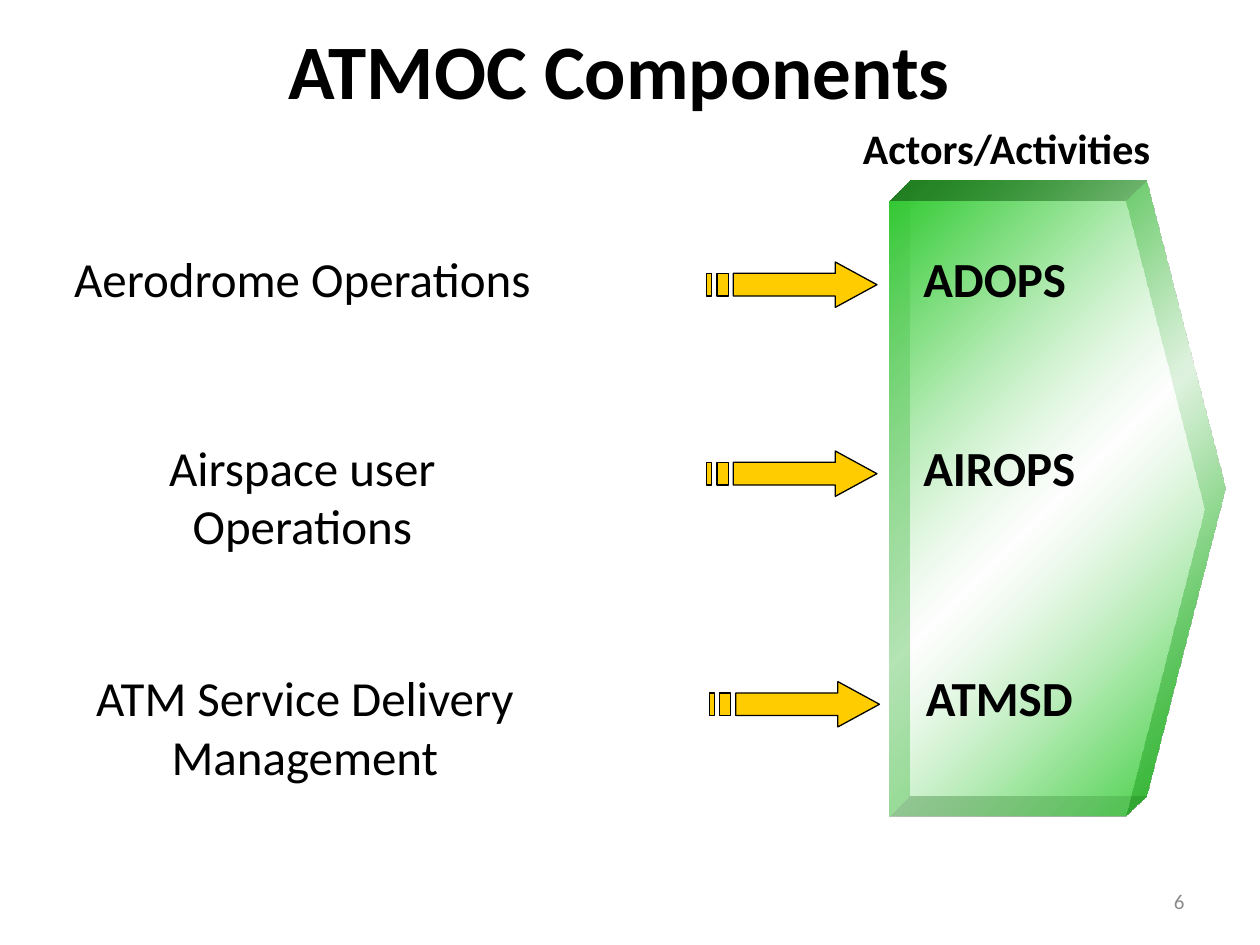
from lxml.etree import SubElement
from pptx import Presentation
from pptx.dml.color import RGBColor
from pptx.enum.shapes import MSO_SHAPE as Shape
from pptx.enum.text import MSO_ANCHOR as Anchor, PP_ALIGN as Align
from pptx.oxml import parse_xml
from pptx.oxml.ns import nsdecls, qn
from pptx.util import Emu, Pt

PX = 9144  # 100 px to the inch
FONT = "Calibri"
BLACK = RGBColor(0x00, 0x00, 0x00)
GREY = RGBColor(0x8C, 0x8C, 0x8C)
AMBER = RGBColor(0xFF, 0xCC, 0x00)
GREEN = RGBColor(0x33, 0xCC, 0x33)
WHITE = RGBColor(0xFF, 0xFF, 0xFF)
TITLE_SHADE = RGBColor(0xEE, 0xEC, 0xE1)

ARROW_CONTOURS = [
    [(102, 0), (102, 9), (21, 9), (21, 27), (102, 27), (102, 36), (135, 18)],
    [(8, 9), (8, 27), (17, 27), (17, 9)],
    [(0, 9), (0, 27), (4, 27), (4, 9)],
]
COMPONENTS = [
    ("Aerodrome Operations", "ADOPS", 38, 192),
    ("Airspace user Operations", "AIROPS", 38, 342),
    ("ATM Service Delivery Management", "ATMSD", 40, 525),
]


def px(*lengths):
    return [Emu(length * PX) for length in lengths]


def write(frame, wording, align=Align.LEFT, anchor=Anchor.TOP, **font_format):
    frame.word_wrap = True
    frame.vertical_anchor = anchor
    paragraph = frame.paragraphs[0]
    paragraph.alignment = align
    run = paragraph.add_run()
    run.text = wording
    run.font.name = FONT
    run.font.color.rgb = font_format.pop("color", BLACK)
    for attribute, value in font_format.items():
        setattr(run.font, attribute, value)
    return run


def add_label(slide, box, wording, **text_format):
    label = slide.shapes.add_textbox(*px(*box))
    write(label.text_frame, wording, **text_format)


def add_title(slide, box):
    title = slide.shapes.title
    title.left, title.top, title.width, title.height = px(*box)
    run = write(title.text_frame, "ATMOC Components", align=Align.CENTER,
                anchor=Anchor.MIDDLE, size=Pt(44), bold=True)
    shadow = parse_xml(
        f'<a:effectLst {nsdecls("a")}>'
        '<a:outerShdw dist="35921" dir="2700000" algn="ctr">'
        f'<a:srgbClr val="{TITLE_SHADE}"/></a:outerShdw></a:effectLst>')
    run.font.fill._xPr.find(qn("a:solidFill")).addnext(shadow)


def gradient_fill():
    stops = "".join(
        f'<a:gs pos="{position * 1000}"><a:srgbClr val="{color}">'
        f'<a:alpha val="{opacity * 1000}"/></a:srgbClr></a:gs>'
        for position, color, opacity in
        [(0, GREEN, 90), (50, WHITE, 30), (100, GREEN, 90)])
    return parse_xml(
        f'<a:gradFill {nsdecls("a")} rotWithShape="1"><a:gsLst>{stops}</a:gsLst>'
        '<a:lin ang="2700000" scaled="1"/></a:gradFill>')


def extrude(properties):
    """Give the shape an oblique depth towards the top right."""
    scene = SubElement(properties, qn("a:scene3d"))
    SubElement(scene, qn("a:camera"), prst="legacyObliqueTopRight")
    SubElement(scene, qn("a:lightRig"), rig="legacyFlat3", dir="b")
    solid = SubElement(properties, qn("a:sp3d"), extrusionH="430200",
                       prstMaterial="legacyMatte")
    for bevel in ("a:bevelT", "a:bevelB"):
        SubElement(solid, qn(bevel), w="13500", h="13500", prst="angle")
    depth_color = SubElement(solid, qn("a:extrusionClr"))
    SubElement(depth_color, qn("a:srgbClr"), val=str(GREEN))


def add_actors_panel(slide, box):
    left, top, width, height = box
    panel = slide.shapes.add_shape(Shape.PENTAGON, *px(*box))
    panel.adjustments[0] = 0.25
    panel.line.fill.background()
    panel.shadow.inherit = False
    properties = panel._element.spPr
    properties.find(qn("a:prstGeom")).addnext(gradient_fill())
    extrude(properties)
    add_label(slide, (left - 31, top - 68, 298, 50), "Actors/Activities",
              size=Pt(24), bold=True)


def add_striped_arrow(slide, left, top):
    first, *stripes = ARROW_CONTOURS
    builder = slide.shapes.build_freeform(*first[0], scale=PX)
    builder.add_line_segments(first[1:], close=True)
    for stripe in stripes:
        builder.move_to(*stripe[0])
        builder.add_line_segments(stripe[1:], close=True)
    arrow = builder.convert_to_shape(*px(left, top))
    arrow.fill.solid()
    arrow.fill.fore_color.rgb = AMBER
    arrow.line.color.rgb = BLACK
    arrow.line.width = Pt(0.75)
    arrow.shadow.inherit = False


def add_component(slide, operation, actor, left, top):
    add_striped_arrow(slide, left + 523, top + 16)
    add_label(slide, (left + 685, top, 206, 57), actor, size=Pt(28), bold=True)
    add_label(slide, (left, top, 404, 103), operation, align=Align.CENTER,
              size=Pt(28))


def main():
    deck = Presentation()
    deck.slide_width, deck.slide_height = px(1000, 750)
    slide = deck.slides.add_slide(deck.slide_layouts[5])
    add_label(slide, (717, 695, 233, 40), "6", align=Align.RIGHT,
              anchor=Anchor.MIDDLE, size=Pt(12), color=GREY)
    add_actors_panel(slide, (706, 160, 250, 488))
    for component in COMPONENTS:
        add_component(slide, *component)
    add_title(slide, (25, -8, 933, 125))
    deck.save("out.pptx")


if __name__ == "__main__":
    main()
